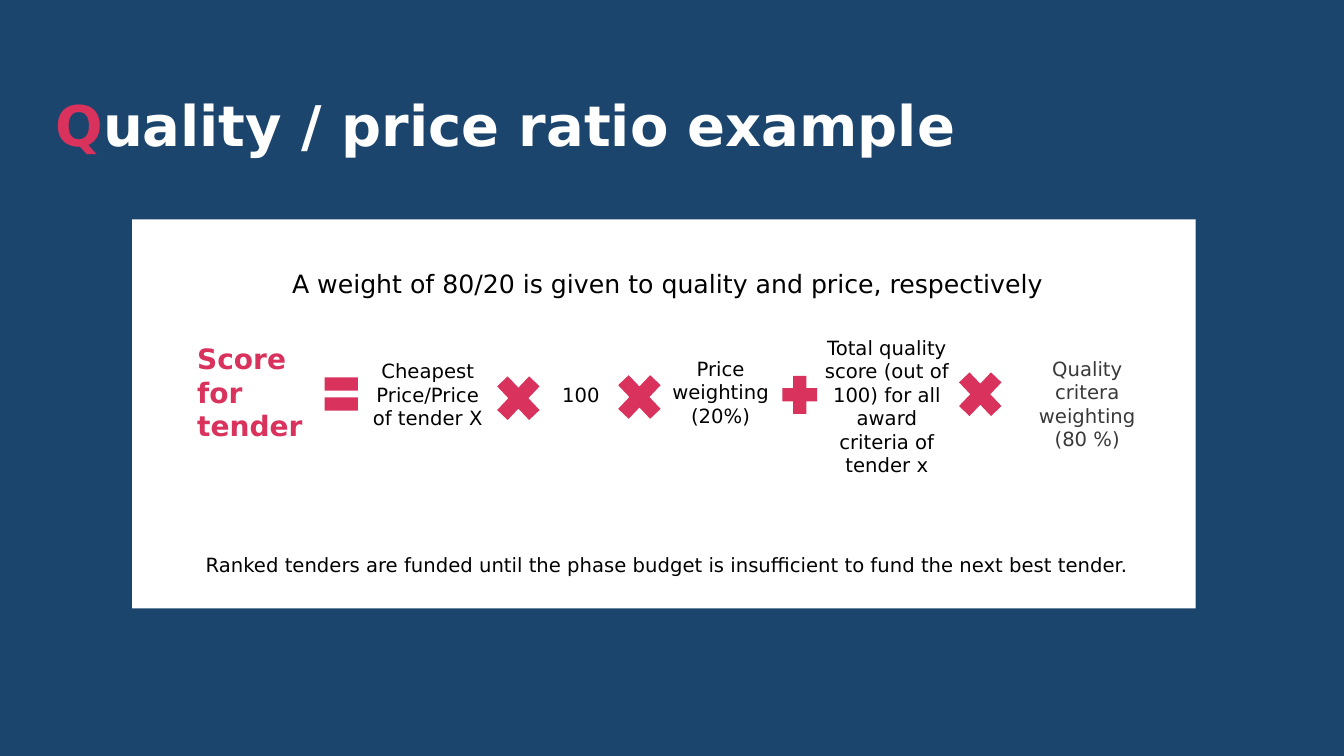
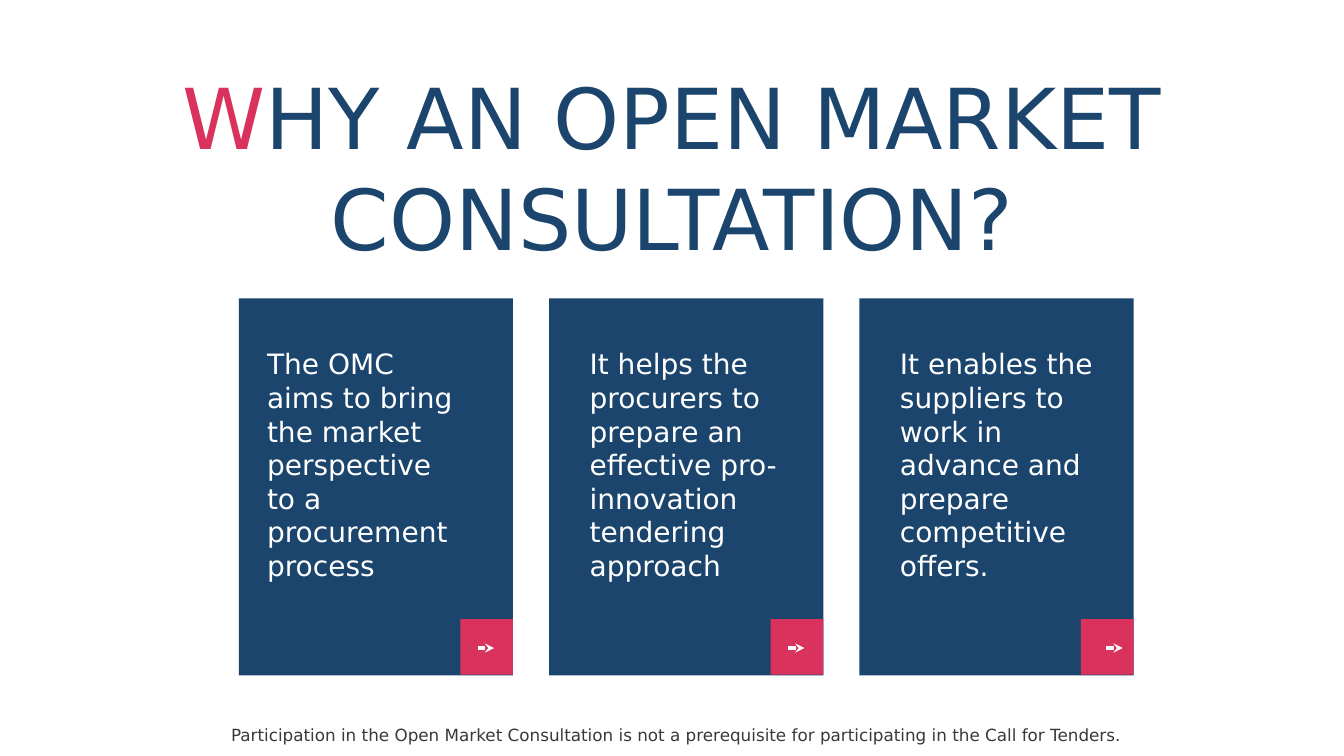
from dataclasses import dataclass
from typing import NamedTuple

from lxml.etree import SubElement
from pptx import Presentation
from pptx.dml.color import RGBColor
from pptx.enum.shapes import MSO_CONNECTOR, MSO_SHAPE
from pptx.enum.text import MSO_AUTO_SIZE, PP_ALIGN
from pptx.oxml.ns import qn
from pptx.shapes.autoshape import Shape
from pptx.slide import Slide
from pptx.util import Cm, Pt


@dataclass(frozen=True)
class Theme:
    font: str = "DejaVu Sans"
    navy: str = "1B456C"
    pink: str = "D9325D"
    white: str = "FFFFFF"
    black: str = "000000"
    gray: str = "393939"
    banner: int = 60
    title: int = 40
    large: int = 20
    lead: int = 18
    body: int = 14
    note: int = 12


THEME = Theme()


class Box(NamedTuple):
    """A place on the slide, in centimetres."""
    left: float
    top: float
    width: float
    height: float

    def cm(self) -> list[Cm]:
        return [Cm(side) for side in self]


class Label(NamedTuple):
    box: Box
    text: str
    size: int = THEME.body
    color: str = THEME.black
    bold: bool = False
    align: PP_ALIGN = PP_ALIGN.CENTER
    inset: bool = True


class Sign(NamedTuple):
    kind: MSO_SHAPE
    box: Box
    adjust: tuple[float, ...]


class Card(NamedTuple):
    text: str
    indent: float = 1.02
    arrow: float = 6.02


def rgb(color: str) -> RGBColor:
    return RGBColor.from_string(color)


def add_slide(deck: Presentation, color: str) -> Slide:
    slide = deck.slides.add_slide(deck.slide_layouts[6])
    slide.background.fill.solid()
    slide.background.fill.fore_color.rgb = rgb(color)
    return slide


def add_solid(slide: Slide, box: Box, color: str,
              kind: MSO_SHAPE = MSO_SHAPE.RECTANGLE) -> Shape:
    shape = slide.shapes.add_shape(kind, *box.cm())
    shape.shadow.inherit = False
    shape.fill.solid()
    shape.fill.fore_color.rgb = rgb(color)
    shape.line.fill.background()
    return shape


def add_label(slide: Slide, label: Label) -> Shape:
    shape = slide.shapes.add_textbox(*label.box.cm())
    frame = shape.text_frame
    frame.word_wrap = True
    frame.auto_size = MSO_AUTO_SIZE.SHAPE_TO_FIT_TEXT
    if not label.inset:
        frame.margin_left = frame.margin_right = 0
        frame.margin_top = frame.margin_bottom = 0
    line = frame.paragraphs[0]
    line.text = label.text
    line.alignment = label.align
    line.font.name = THEME.font
    line.font.size = Pt(label.size)
    line.font.bold = label.bold
    line.font.color.rgb = rgb(label.color)
    return shape


def add_title(slide: Slide, label: Label, space: float = 1.0) -> None:
    """Draw a title whose first letter is pink."""
    shape = add_label(slide, label._replace(text="", inset=False))
    line = shape.text_frame.paragraphs[0]
    line.line_spacing = space
    for text, color in ((label.text[0], THEME.pink),
                        (label.text[1:], label.color)):
        run = line.add_run()
        run.text = text
        run.font.color.rgb = rgb(color)


def add_sign(slide: Slide, sign: Sign) -> None:
    shape = add_solid(slide, sign.box, THEME.pink, sign.kind)
    for index, value in enumerate(sign.adjust):
        shape.adjustments[index] = value


def add_arrow(slide: Slide, left: float, top: float) -> None:
    arrow = slide.shapes.add_connector(
        MSO_CONNECTOR.STRAIGHT, Cm(left), Cm(top), Cm(left + 0.41), Cm(top))
    arrow.line.color.rgb = rgb(THEME.white)
    arrow.line.width = Pt(2.25)
    SubElement(arrow.line._get_or_add_ln(), qn("a:tailEnd"), type="stealth")
    SubElement(arrow._element.spPr, qn("a:effectLst"))


def add_card(slide: Slide, left: float, card: Card) -> None:
    add_solid(slide, Box(left, 7.52, 6.91, 9.5), THEME.navy)
    add_label(slide, Label(Box(left + card.indent, 8.74, 4.88, 6), card.text,
                           THEME.large, THEME.white,
                           align=PP_ALIGN.LEFT, inset=False))
    add_solid(slide, Box(left + 5.58, 15.6, 1.33, 1.4), THEME.pink)
    add_arrow(slide, left + card.arrow, 16.33)


TIMES = MSO_SHAPE.MATH_MULTIPLY
SIGNS = (
    Sign(MSO_SHAPE.MATH_EQUAL, Box(8.03, 9.22, 1.14, 1.42), (0.235, 0.118)),
    Sign(TIMES, Box(12.29, 9.22, 1.55, 1.63), (0.235,)),
    Sign(TIMES, Box(15.34, 9.19, 1.55, 1.63), (0.235,)),
    Sign(MSO_SHAPE.MATH_PLUS, Box(19.56, 9.3, 1.19, 1.3), (0.278,)),
    Sign(TIMES, Box(23.93, 9.12, 1.55, 1.63), (0.235,)),
)
LABELS = (
    Label(Box(7.11, 6.63, 21, 1.02),
          "A weight of 80/20 is given to quality and price, respectively",
          THEME.lead, align=PP_ALIGN.LEFT),
    Label(Box(4.72, 8.48, 3.33, 2.82), "Score for tender",
          THEME.large, THEME.pink, True, PP_ALIGN.LEFT),
    Label(Box(9.14, 8.92, 3.28, 2.64), "Cheapest Price/Price of tender X"),
    Label(Box(13.92, 9.53, 1.6, 0.86), "100", align=PP_ALIGN.LEFT),
    Label(Box(16.51, 8.86, 3.3, 2.06), "Price weighting (20%)"),
    Label(Box(20.52, 8.33, 3.66, 3.84),
          "Total quality score (out of 100) for all award criteria of tender x"),
    Label(Box(25.48, 8.86, 3.84, 2.64),
          "Quality critera weighting\v(80 %)", color=THEME.gray),
    Label(Box(3.91, 13.82, 25.8, 0.86),
          "Ranked tenders are funded until the phase budget is insufficient "
          "to fund the next best tender."),
)
CARDS = (
    Card("The OMC aims to bring the market perspective to a procurement process",
         indent=0.71),
    Card("It helps the procurers to prepare an effective pro-innovation "
         "tendering approach"),
    Card("It enables the suppliers to work in advance and prepare "
         "competitive offers.", arrow=6.22),
)


def add_ratio(deck: Presentation) -> None:
    slide = add_slide(deck, THEME.navy)
    add_title(slide, Label(Box(1.4, 2.5, 25.04, 1.24),
                           "Quality / price ratio example", THEME.title,
                           THEME.white, True, PP_ALIGN.LEFT), 0.88)
    add_solid(slide, Box(3.33, 5.53, 26.8, 9.8), THEME.white)
    for label in LABELS:
        add_label(slide, label)
    for sign in SIGNS:
        add_sign(slide, sign)


def add_reasons(deck: Presentation) -> None:
    slide = add_slide(deck, THEME.white)
    for index, card in enumerate(CARDS):
        add_card(slide, 6.02 + 7.82 * index, card)
    add_title(slide, Label(Box(0, 1.65, 33.87, 5.13),
                           "WHY AN OPEN MARKET CONSULTATION?",
                           THEME.banner, THEME.navy))
    add_label(slide, Label(
        Box(0.58, 18.14, 32.94, 0.76),
        "Participation in the Open Market Consultation is not a prerequisite "
        "for participating in the Call for Tenders.",
        THEME.note, THEME.gray))


def main() -> None:
    deck = Presentation()
    deck.slide_width, deck.slide_height = Cm(33.87), Cm(19.05)
    add_ratio(deck)
    add_reasons(deck)
    deck.save("out.pptx")


if __name__ == "__main__":
    main()
